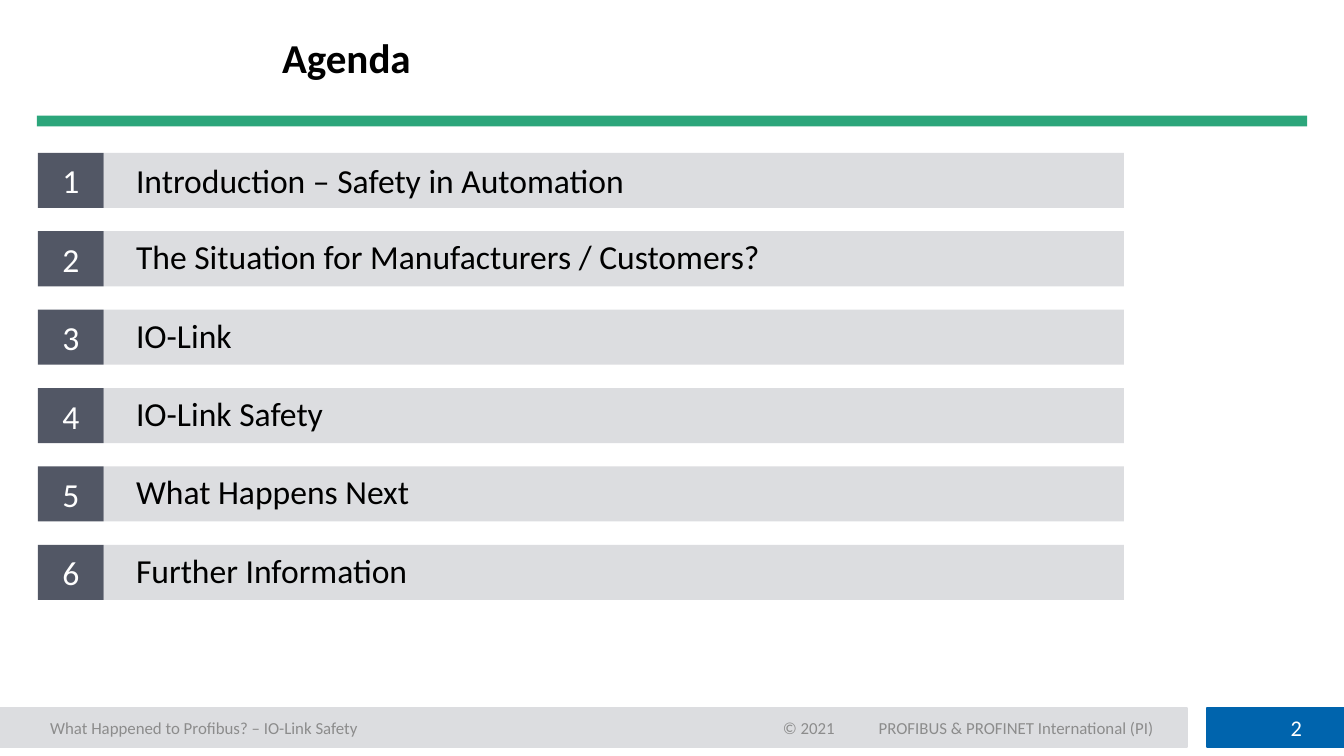
"""Build the agenda slide of a presentation about IO-Link Safety."""
from dataclasses import dataclass

from pptx import Presentation
from pptx.dml.color import RGBColor
from pptx.enum.shapes import MSO_SHAPE
from pptx.enum.text import MSO_ANCHOR, PP_ALIGN
from pptx.shapes.autoshape import Shape
from pptx.slide import Slide
from pptx.util import Inches, Pt

RECTANGLE = MSO_SHAPE.RECTANGLE
MIDDLE = MSO_ANCHOR.MIDDLE
LEFT, CENTER, RIGHT = PP_ALIGN.LEFT, PP_ALIGN.CENTER, PP_ALIGN.RIGHT

SLIDE_WIDTH = Inches(10)
SLIDE_HEIGHT = SLIDE_WIDTH * 9 // 16
FONT = "Calibri"
BLACK, WHITE, GRAY = "000000", "FFFFFF", "8C8C8C"
PALE, SLATE, GREEN, BLUE = "DCDDE0", "525765", "2CA67B", "0064AD"

FOOTER_TOP, FOOTER_HEIGHT = 93.66, 5.16
ROW_TOP, ROW_PITCH, ROW_HEIGHT = 20.22, 10.37, 7.29
NUMBER_LEFT, NUMBER_WIDTH, TOPIC_WIDTH = 2.82, 4.9, 75.9
TOPICS = (
    "Introduction – Safety in Automation",
    "The Situation for Manufacturers / Customers?",
    "IO-Link",
    "IO-Link Safety",
    "What Happens Next",
    "Further Information",
)


@dataclass(frozen=True)
class Area:
    """A place on the slide, in percent of its width and height."""

    left: float
    top: float
    width: float
    height: float

    def lengths(self) -> tuple[int, int, int, int]:
        """Return left, top, width and height as slide lengths."""
        return (
            round(SLIDE_WIDTH * self.left / 100),
            round(SLIDE_HEIGHT * self.top / 100),
            round(SLIDE_WIDTH * self.width / 100),
            round(SLIDE_HEIGHT * self.height / 100),
        )


@dataclass(frozen=True)
class Label:
    """A single line of text with its look and side insets in inches."""

    text: str
    size: float
    color: str
    align: PP_ALIGN = LEFT
    bold: bool = False
    spacing: float = 1.0
    inset_left: float = 0.1
    inset_right: float = 0.1


def rgb(color: str) -> RGBColor:
    """Turn a hex string into a colour."""
    return RGBColor.from_string(color)


def write(box: Shape, label: Label) -> None:
    """Write a label into a box."""
    frame = box.text_frame
    frame.word_wrap = True
    frame.vertical_anchor = MIDDLE
    frame.margin_left = Inches(label.inset_left)
    frame.margin_right = Inches(label.inset_right)
    para = frame.paragraphs[0]
    para.alignment = label.align
    para.line_spacing = label.spacing
    span = para.add_run()
    span.text = label.text
    span.font.name = FONT
    span.font.size = Pt(label.size)
    span.font.bold = label.bold
    span.font.color.rgb = rgb(label.color)


def add_bar(slide: Slide, area: Area, color: str, outlined: bool = False) -> Shape:
    """Draw a filled rectangle, with a line of its own colour if outlined."""
    bar = slide.shapes.add_shape(RECTANGLE, *area.lengths())
    bar.shadow.inherit = False
    bar.fill.solid()
    bar.fill.fore_color.rgb = rgb(color)
    if outlined:
        bar.line.color.rgb = rgb(color)
        bar.line.width = Pt(1)
    else:
        bar.line.fill.background()
    return bar


def add_text(slide: Slide, area: Area, label: Label) -> None:
    """Place a text box with one label."""
    write(slide.shapes.add_textbox(*area.lengths()), label)


def footer_area(left: float, width: float) -> Area:
    """Return an area in the footer band."""
    return Area(left, FOOTER_TOP, width, FOOTER_HEIGHT)


def add_footer(slide: Slide) -> None:
    """Draw the footer band and its texts."""
    add_bar(slide, footer_area(0, 88.3), PALE, outlined=True)
    add_bar(slide, footer_area(89.8, 10.2), BLUE, outlined=True)
    add_text(slide, footer_area(92, 5.85), Label("2", 12, WHITE, RIGHT))
    add_text(slide, footer_area(64.4, 22.6),
             Label("PROFIBUS & PROFINET International (PI)", 9, GRAY))
    add_text(slide, footer_area(2.75, 31.4),
             Label("What Happened to Profibus? – IO-Link Safety", 9, GRAY))
    add_text(slide, footer_area(58.25, 4.4),
             Label("© 2021", 9, GRAY, inset_left=0, inset_right=0))


def add_topic(slide: Slide, index: int, topic: str) -> None:
    """Draw one agenda row with its number."""
    top = ROW_TOP + index * ROW_PITCH
    spacing = 0.9 if index else 1.0
    topic_area = Area(NUMBER_LEFT + NUMBER_WIDTH, top, TOPIC_WIDTH, ROW_HEIGHT)
    write(add_bar(slide, topic_area, PALE),
          Label(topic, 18, BLACK, spacing=spacing, inset_left=0.24))
    number_area = Area(NUMBER_LEFT, top, NUMBER_WIDTH, ROW_HEIGHT)
    write(add_bar(slide, number_area, SLATE),
          Label(str(index + 1), 18, WHITE, CENTER, inset_left=0.04, inset_right=0.04))


def main() -> None:
    """Build and save the deck."""
    deck = Presentation()
    deck.slide_width, deck.slide_height = SLIDE_WIDTH, SLIDE_HEIGHT
    slide = deck.slides.add_slide(deck.slide_layouts[6])
    add_footer(slide)
    add_bar(slide, Area(2.75, 15.3, 94.5, 1.42), GREEN)
    for index, topic in enumerate(TOPICS):
        add_topic(slide, index, topic)
    add_text(slide, Area(20, 1.96, 77.2, 12.09),
             Label("Agenda", 22, BLACK, bold=True, spacing=0.9))
    deck.save("out.pptx")


if __name__ == "__main__":
    main()
